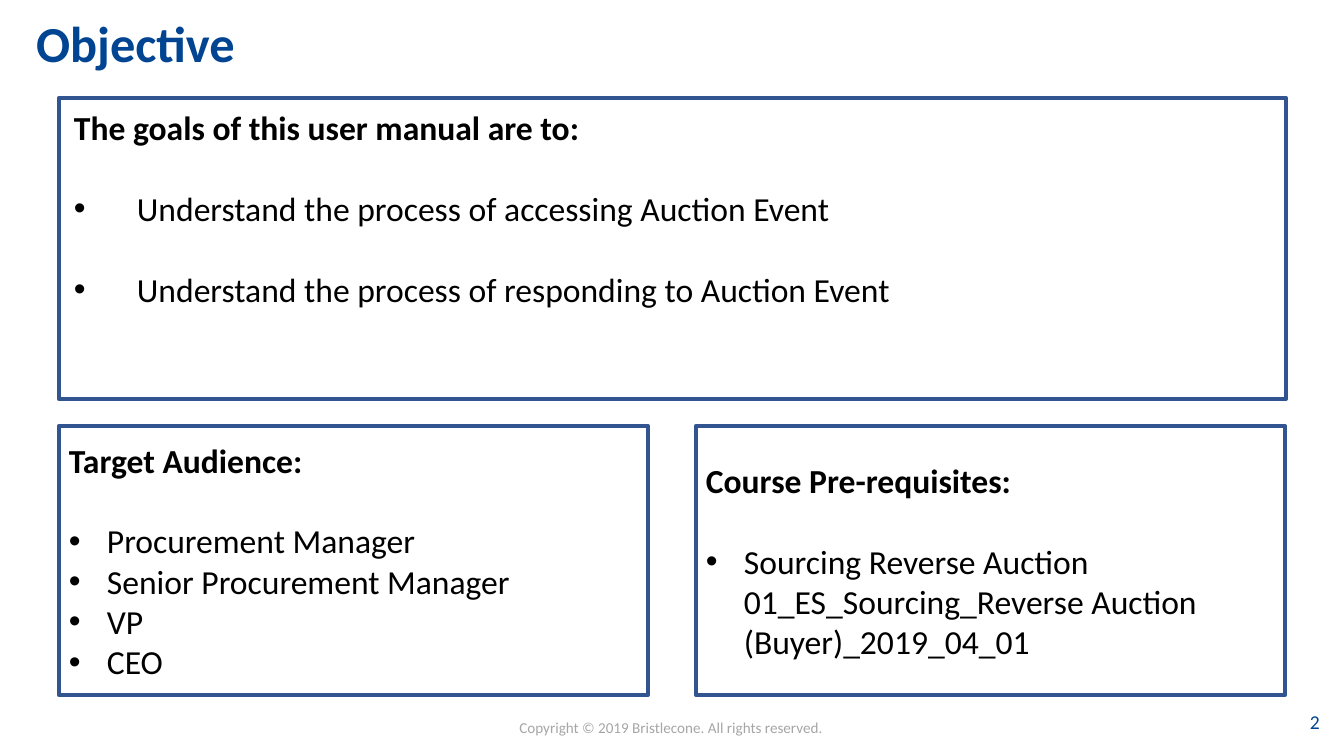
from lxml.etree import SubElement
from pptx import Presentation
from pptx.dml.color import RGBColor
from pptx.enum.shapes import MSO_SHAPE as Shape
from pptx.enum.text import MSO_ANCHOR as Anchor, PP_ALIGN as Align
from pptx.oxml.ns import qn
from pptx.util import Emu, Pt

TITLE = "Objective"
GOALS = ("The goals of this user manual are to:", [
    "Understand the process of accessing Auction Event",
    "Understand the process of responding to Auction Event",
])
AUDIENCE = ("Target Audience:", [
    "Procurement Manager",
    "Senior Procurement Manager",
    "VP",
    "CEO",
])
PREREQUISITES = ("Course Pre-requisites:", [
    "Sourcing Reverse Auction 01_ES_Sourcing_Reverse Auction (Buyer)_2019_04_01",
])
COPYRIGHT = "Copyright © 2019 Bristlecone. All rights reserved."
PAGE_NUMBER = "2"

COLORS = {"title": "004492", "text": "000000", "frame": "325491", "footer": "A6A6A6"}
FONT = "Calibri"
BODY_SIZE = 24
BLANK_LINE = Pt(29)  # height of one body line

# Places in px: left, top, width, height
TITLE_BOX = (26, 14, 1018, 83)
GOALS_FRAME = (59, 98, 1227, 301)
GOALS_TEXT = (64, 102, 1221, 295)
LOWER_LEFT, LOWER_TOP, LOWER_WIDTH, LOWER_HEIGHT = 59, 426, 589, 269
LOWER_STEP = 637
COPYRIGHT_BOX = (440, 713, 462, 28)
NUMBER_BOX = (1286, 702, 58, 40)


def px(length):
    return Emu(round(length * 914400 / 100.8))


def place(box):
    return [px(length) for length in box]


def style(paragraph, size, color, bold=False):
    font = paragraph.font
    font.name, font.size, font.bold = FONT, Pt(size), bold
    font.color.rgb = RGBColor.from_string(COLORS[color])


def add_bullet(paragraph, indent):
    properties = paragraph._p.get_or_add_pPr()
    properties.set("marL", str(px(indent)))
    properties.set("indent", str(-px(indent)))
    SubElement(properties, qn("a:buFont"), typeface="Arial")
    SubElement(properties, qn("a:buChar"), char="•")


def write_list(frame, content, indent, spaced=False):
    heading, items = content
    frame.word_wrap = True
    paragraph = frame.paragraphs[0]
    paragraph.text = heading
    paragraph.alignment = Align.LEFT
    style(paragraph, BODY_SIZE, "text", bold=True)
    for index, item in enumerate(items):
        paragraph = frame.add_paragraph()
        paragraph.text = item
        paragraph.alignment = Align.LEFT
        add_bullet(paragraph, indent)
        if spaced or index == 0:
            paragraph.space_before = BLANK_LINE
        style(paragraph, BODY_SIZE, "text")


def add_frame(slide, box):
    shape = slide.shapes.add_shape(Shape.RECTANGLE, *place(box))
    shape.shadow.inherit = False
    shape.fill.background()
    shape.line.color.rgb = RGBColor.from_string(COLORS["frame"])
    shape.line.width = Pt(3)
    return shape


def add_label(slide, box, text, size, color, anchor):
    frame = slide.shapes.add_textbox(*place(box)).text_frame
    frame.word_wrap = True
    frame.vertical_anchor = anchor
    paragraph = frame.paragraphs[0]
    paragraph.text = text
    paragraph.alignment = Align.CENTER
    style(paragraph, size, color)


def main():
    presentation = Presentation()
    presentation.slide_width, presentation.slide_height = px(1344), px(756)
    slide = presentation.slides.add_slide(presentation.slide_layouts[5])

    # Title
    title = slide.shapes.title
    title.left, title.top, title.width, title.height = place(TITLE_BOX)
    title.text_frame.text = TITLE
    title.text_frame.vertical_anchor = Anchor.TOP
    paragraph = title.text_frame.paragraphs[0]
    paragraph.alignment = Align.LEFT
    paragraph.line_spacing = 0.9
    style(paragraph, 36, "title", bold=True)

    # Goals
    goals = slide.shapes.add_textbox(*place(GOALS_TEXT))
    write_list(goals.text_frame, GOALS, 63, spaced=True)
    add_frame(slide, GOALS_FRAME)

    # Audience and prerequisites, side by side
    for column, content in enumerate((AUDIENCE, PREREQUISITES)):
        left = LOWER_LEFT + column * LOWER_STEP
        panel = add_frame(slide, (left, LOWER_TOP, LOWER_WIDTH, LOWER_HEIGHT))
        panel.text_frame.vertical_anchor = Anchor.MIDDLE
        write_list(panel.text_frame, content, 38)

    # Footer
    add_label(slide, COPYRIGHT_BOX, COPYRIGHT, 10.8, "footer", Anchor.TOP)
    add_label(slide, NUMBER_BOX, PAGE_NUMBER, 14, "title", Anchor.MIDDLE)

    presentation.save("out.pptx")


if __name__ == "__main__":
    main()
